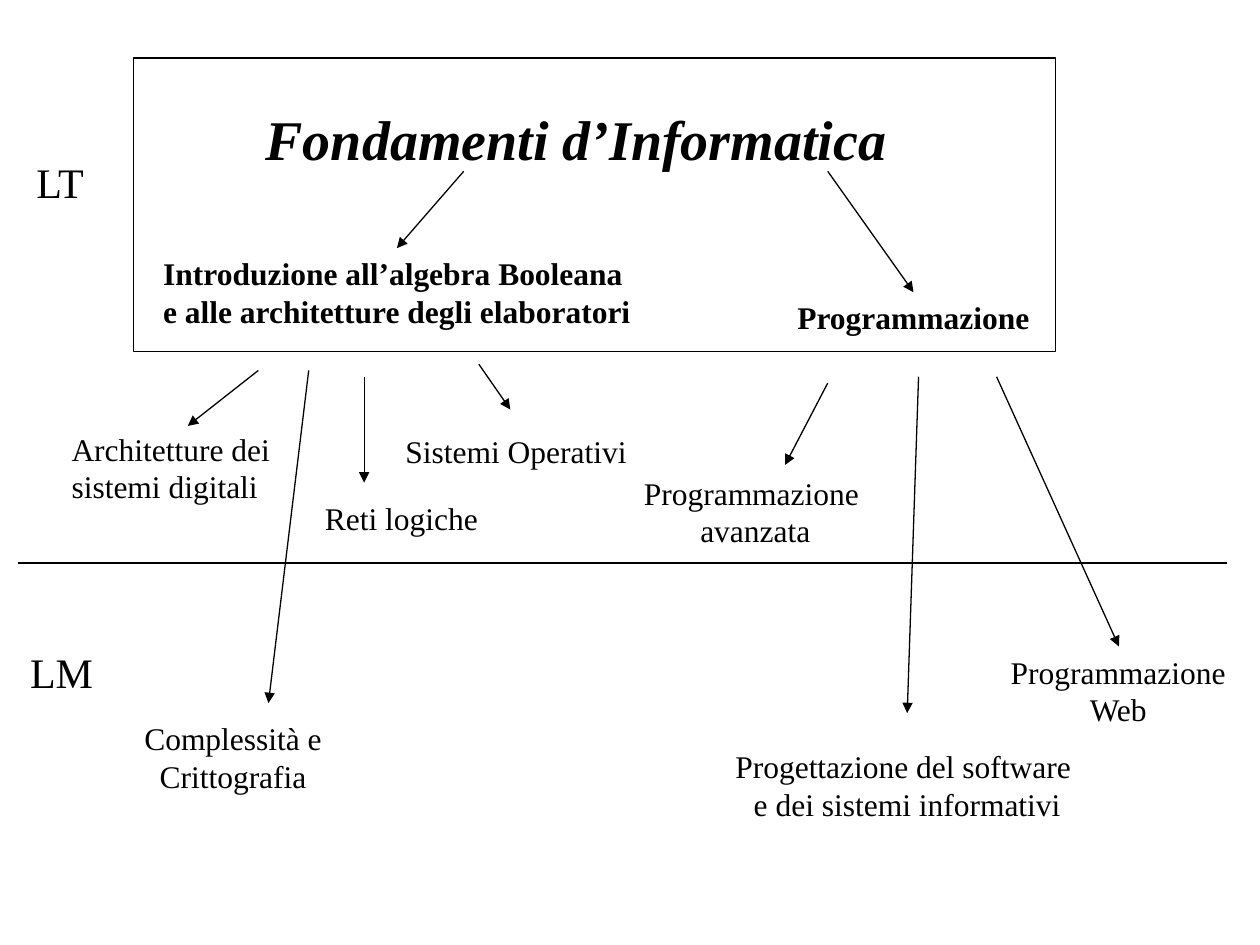
"""Build a course map of computer science topics across the LT and LM degrees."""
from lxml import etree
from pptx import Presentation
from pptx.dml.color import RGBColor
from pptx.enum.shapes import MSO_CONNECTOR, MSO_SHAPE
from pptx.enum.text import MSO_AUTO_SIZE, PP_ALIGN
from pptx.oxml.ns import qn
from pptx.util import Pt

BLACK = RGBColor(0, 0, 0)
STRAIGHT = MSO_CONNECTOR.STRAIGHT
RECTANGLE = MSO_SHAPE.RECTANGLE
FIT_SHAPE = MSO_AUTO_SIZE.SHAPE_TO_FIT_TEXT
LEFT, CENTER = PP_ALIGN.LEFT, PP_ALIGN.CENTER

LEVELS = [("LT", (13.7, 85.7, 41.8, 36.7)), ("LM", (10.1, 365.8, 51.1, 36.7))]

MAIN_TOPICS = [
    ("Programmazione", (447.8, 167, 148.3, 28.8), False),
    ("Introduzione all’algebra Booleana \ne alle architetture degli elaboratori",
     (76.3, 141.8, 301, 51.1), True),
]

CENTERED_COURSES = [
    ("Programmazione \navanzata", (360, 267.1, 143.3, 51.1), False),
    ("Programmazione\nWeb", (569.5, 369.4, 139, 51.1), False),
    ("Complessità e\nCrittografia", (42.5, 407.5, 181.4, 51.1), True),
    ("Progettazione del software \ne dei sistemi informativi",
     (382.3, 423.4, 272.2, 51.1), True),
]

LEFT_COURSES = [
    ("Sistemi Operativi", (224.6, 243.4, 142.6, 28.8)),
    ("Architetture dei\nsistemi digitali", (33.8, 241.9, 135.4, 51.1)),
    ("Reti logiche", (178.6, 281.5, 103, 28.8)),
]

ARROWS = [
    ((265, 97.9), (226.8, 141.8)),
    ((473, 97.9), (522, 167)),
    ((147.6, 211.7), (107.3, 243.4)),
    ((176.4, 211.7), (153.4, 401.8)),
    ((208.1, 215.3), (208.1, 275.8)),
    ((273.6, 208.1), (291.6, 234)),
    ((473, 218.9), (448.6, 265.7)),
    ((524.9, 215.3), (518.4, 407.5)),
    ((569.5, 215.3), (639.4, 369.4)),
]


def add_span(para, text, size=18, bold=False, italic=False, color=BLACK,
             font="Times New Roman"):
    span = para.add_run()
    span.text = text
    span.font.name = font
    span.font.size = Pt(size)
    span.font.bold = bold
    span.font.italic = italic
    span.font.color.rgb = color


class CourseMap:
    def __init__(self, page, color=BLACK, line_width=0.75):
        self.page = page
        self.color = color
        self.line_width = Pt(line_width)

    def label(self, text, bounds, align=LEFT, wrap=False, **style):
        box = self.page.shapes.add_textbox(*map(Pt, bounds))
        frame = box.text_frame
        frame.word_wrap = wrap
        frame.auto_size = FIT_SHAPE
        for index, line in enumerate(text.split("\n")):
            para = frame.add_paragraph() if index else frame.paragraphs[0]
            para.alignment = align
            add_span(para, line, color=self.color, **style)

    def frame(self, bounds):
        box = self.page.shapes.add_shape(RECTANGLE, *map(Pt, bounds))
        box.shadow.inherit = False
        box.fill.background()
        box.line.color.rgb = self.color
        box.line.width = self.line_width

    def line(self, start, end, arrow=False):
        connector = self.page.shapes.add_connector(
            STRAIGHT, *map(Pt, (*start, *end)))
        connector.line.color.rgb = self.color
        connector.line.width = self.line_width
        properties = connector.line._get_or_add_ln()
        if arrow:
            etree.SubElement(properties, qn("a:tailEnd"), type="triangle")
        etree.SubElement(properties.getparent(), qn("a:effectLst"))


def main():
    deck = Presentation()
    deck.slide_width, deck.slide_height = Pt(720), Pt(540)
    course_map = CourseMap(deck.slides.add_slide(deck.slide_layouts[6]))

    course_map.frame((76.3, 33.1, 527, 167.8))
    course_map.line((10.1, 321.8), (701.3, 321.8))
    course_map.label("Fondamenti d’Informatica", (144.7, 56.2, 383, 46.1),
                     size=32, bold=True, italic=True)
    for text, bounds in LEVELS:
        course_map.label(text, bounds, size=24)
    for text, bounds, wrap in MAIN_TOPICS:
        course_map.label(text, bounds, CENTER, wrap, bold=True)
    for text, bounds, wrap in CENTERED_COURSES:
        course_map.label(text, bounds, CENTER, wrap)
    for text, bounds in LEFT_COURSES:
        course_map.label(text, bounds)
    for start, end in ARROWS:
        course_map.line(start, end, arrow=True)
    deck.save("out.pptx")


if __name__ == "__main__":
    main()
